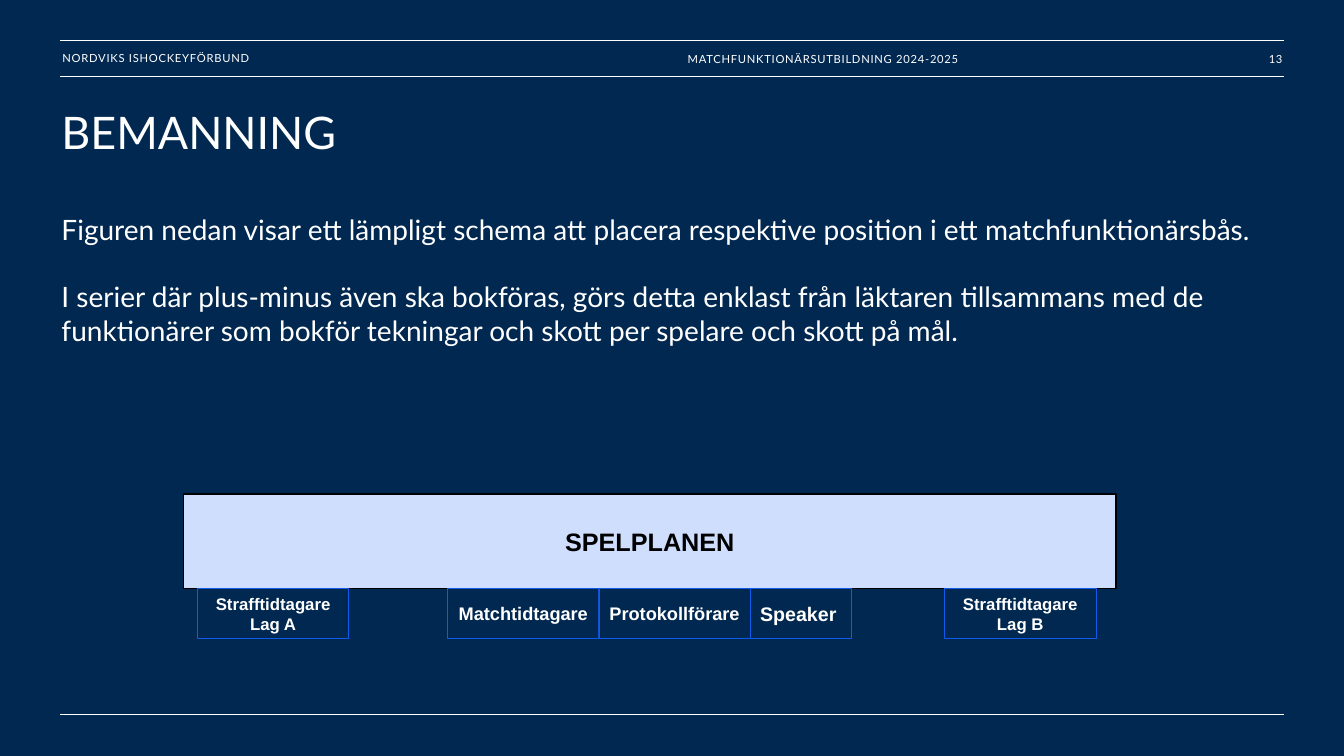
from pptx import Presentation
from pptx.dml.color import RGBColor
from pptx.enum.shapes import MSO_CONNECTOR, MSO_SHAPE
from pptx.enum.text import MSO_ANCHOR, PP_ALIGN
from pptx.oxml.ns import qn
from pptx.util import Inches, Pt
from lxml.etree import SubElement

NAVY = RGBColor(0x00, 0x28, 0x50)
WHITE = RGBColor(0xFF, 0xFF, 0xFF)
BLACK = RGBColor(0x00, 0x00, 0x00)
ICE = RGBColor(0xCE, 0xDE, 0xFC)
BLUE = RGBColor(0x0F, 0x59, 0xEB)


def add_rule(slide, left, top, width):
    rule = slide.shapes.add_connector(
        MSO_CONNECTOR.STRAIGHT,
        Inches(left), Inches(top), Inches(left + width), Inches(top),
    )
    rule.line.color.rgb = WHITE
    rule.line.width = Pt(1)
    SubElement(rule._element.spPr, qn("a:effectLst"))


def add_text(slide, text, left, top, width, height, size,
             anchor=MSO_ANCHOR.TOP, align=PP_ALIGN.LEFT, inset_top=0,
             tracking=0, space_after=0):
    box = slide.shapes.add_textbox(
        Inches(left), Inches(top), Inches(width), Inches(height))
    frame = box.text_frame
    frame.word_wrap = True
    frame.vertical_anchor = anchor
    frame.margin_left = frame.margin_right = frame.margin_bottom = 0
    frame.margin_top = Inches(inset_top)
    frame.text = text
    for paragraph in frame.paragraphs:
        paragraph.alignment = align
        paragraph.space_after = Pt(space_after)
        for run in paragraph.runs:
            run.font.name = "Lato"
            run.font.size = Pt(size)
            run.font.color.rgb = WHITE
            if tracking:
                run._r.get_or_add_rPr().set("spc", str(int(tracking * 100)))


def add_block(slide, text, left, top, width, height, size,
              fill, line, line_width, color, align=PP_ALIGN.CENTER):
    block = slide.shapes.add_shape(
        MSO_SHAPE.RECTANGLE,
        Inches(left), Inches(top), Inches(width), Inches(height))
    block.shadow.inherit = False
    block.fill.solid()
    block.fill.fore_color.rgb = fill
    block.line.color.rgb = line
    block.line.width = Pt(line_width)
    frame = block.text_frame
    frame.word_wrap = True
    frame.vertical_anchor = MSO_ANCHOR.MIDDLE
    frame.text = text
    paragraph = frame.paragraphs[0]
    paragraph.alignment = align
    font = paragraph.runs[0].font
    font.name = "Arial"
    font.size = Pt(size)
    font.bold = True
    font.color.rgb = color


def add_header(slide, left, top, width, height):
    add_rule(slide, left, top, width)
    add_rule(slide, left, top + height, width)
    labels = [
        ("NORDVIKS ISHOCKEYFÖRBUND", 0.02, 3.36, 0.35, PP_ALIGN.LEFT, 0),
        ("MATCHFUNKTIONÄRSUTBILDNING 2024-2025", 6.22, 3.82, 0.34, PP_ALIGN.LEFT, 0.04),
        ("13", width - 0.9, 0.89, 0.34, PP_ALIGN.RIGHT, 0.04),
    ]
    for text, offset, label_width, label_height, align, inset_top in labels:
        add_text(slide, text, left + offset, top, label_width, label_height, 8,
                 MSO_ANCHOR.MIDDLE, align, inset_top, tracking=0.5)


def add_message(slide, left, top, width):
    add_text(slide, "BEMANNING", left, top, width, 0.6, 32)
    body = (
        "Figuren nedan visar ett lämpligt schema att placera respektive position "
        "i ett matchfunktionärsbås.\n"
        "I serier där plus-minus även ska bokföras, görs detta enklast från läktaren "
        "tillsammans med de funktionärer som bokför tekningar och skott per spelare "
        "och skott på mål."
    )
    add_text(slide, body, left, top + 1.07, width, 1.5, 20, space_after=24)


def add_rink(slide, left, top, width, height):
    add_block(slide, "SPELPLANEN", left, top, width, height, 18, ICE, BLACK, 1, BLACK)
    seats = [
        ("Strafftidtagare Lag A", 0.14, 1.5, 12, PP_ALIGN.CENTER),
        ("Matchtidtagare", 2.62, 1.5, 13, PP_ALIGN.CENTER),
        ("Protokollförare", 4.12, 1.5, 13, PP_ALIGN.CENTER),
        ("Speaker", 5.62, 1, 14, PP_ALIGN.LEFT),
        ("Strafftidtagare Lag B", 7.55, 1.5, 12, PP_ALIGN.CENTER),
    ]
    for text, offset, seat_width, size, align in seats:
        add_block(slide, text, left + offset, top + height, seat_width, 0.49, size,
                  NAVY, BLUE, 0.5, WHITE, align)


def main():
    presentation = Presentation()
    presentation.slide_width = Inches(13.33)
    presentation.slide_height = Inches(7.5)
    slide = presentation.slides.add_slide(presentation.slide_layouts[6])
    slide.background.fill.solid()
    slide.background.fill.fore_color.rgb = NAVY
    add_header(slide, 0.6, 0.4, 12.13, 0.36)
    add_message(slide, 0.61, 1.04, 12.12)
    add_rink(slide, 1.82, 4.9, 9.25, 0.94)
    add_rule(slide, 0.6, 7.09, 12.13)
    presentation.save("out.pptx")


if __name__ == "__main__":
    main()
